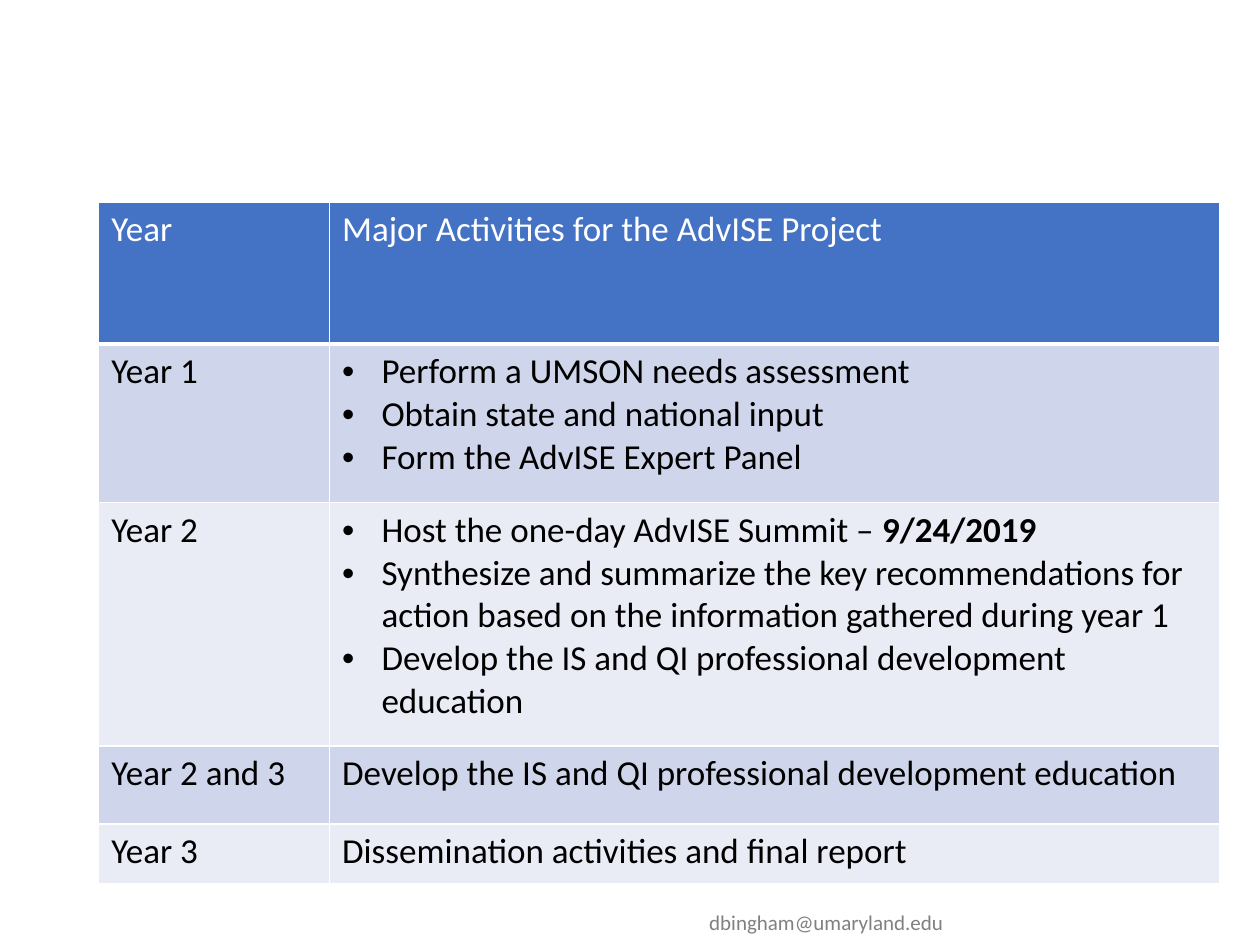
from lxml import etree
from pptx import Presentation
from pptx.dml.color import RGBColor
from pptx.oxml import ns
from pptx.util import Pt

FONT = "Calibri"
HEADER_FILL = "4472C4"
BAND_FILLS = ("CFD5EA", "E9EBF5")
COLUMN_WIDTHS = (131.9, 508.6)
ROW_HEIGHTS = (81, 90.7, 139, 44.6, 34.4)
BULLET_INDENT = 22.5

# Each activity is a list of (text, bold) runs; several activities become bullets.
PLAN = [
    ("Year", [[("Major Activities for the AdvISE Project", False)]]),
    ("Year 1", [
        [("Perform a UMSON needs assessment", False)],
        [("Obtain state and national input", False)],
        [("Form the AdvISE Expert Panel", False)],
    ]),
    ("Year 2", [
        [("Host the one-day AdvISE Summit – ", False), ("9/24/2019", True)],
        [("Synthesize and summarize the key recommendations for action "
          "based on the information gathered during year 1", False)],
        [("Develop the IS and QI professional development education", False)],
    ]),
    ("Year 2 and 3",
     [[("Develop the IS and QI professional development education", False)]]),
    ("Year 3", [[("Dissemination activities and final report", False)]]),
]


def color(value):
    return RGBColor.from_string(value)


def add_run(paragraph, words, size, ink, bold=False):
    run = paragraph.add_run()
    run.text = words
    run.font.name = FONT
    run.font.size = Pt(size)
    run.font.bold = bold
    run.font.color.rgb = color(ink)


def add_bullet(paragraph):
    properties = paragraph._p.get_or_add_pPr()
    properties.set("marL", str(Pt(BULLET_INDENT)))
    properties.set("indent", str(-Pt(BULLET_INDENT)))
    etree.SubElement(properties, ns.qn("a:buFont"), typeface="Arial")
    etree.SubElement(properties, ns.qn("a:buChar"), char="•")


def set_borders(cell, bottom_width):
    properties = cell._tc.get_or_add_tcPr()
    for side, width in zip("LRTB", (1, 1, 1, bottom_width)):
        line = etree.SubElement(properties, ns.qn(f"a:ln{side}"), w=str(Pt(width)))
        fill = etree.SubElement(line, ns.qn("a:solidFill"))
        etree.SubElement(fill, ns.qn("a:srgbClr"), val="FFFFFF")


def fill_cell(cell, paragraphs, fill, ink, bottom_width):
    set_borders(cell, bottom_width)
    cell.fill.solid()
    cell.fill.fore_color.rgb = color(fill)
    frame = cell.text_frame
    for index, runs in enumerate(paragraphs):
        paragraph = frame.add_paragraph() if index else frame.paragraphs[0]
        if len(paragraphs) > 1:
            add_bullet(paragraph)
        for words, bold in runs:
            add_run(paragraph, words, 20, ink, bold)


def add_plan_table(slide, left, top, width, height):
    table = slide.shapes.add_table(
        len(PLAN), len(COLUMN_WIDTHS), Pt(left), Pt(top), Pt(width), Pt(height)
    ).table
    for column, share in zip(table.columns, COLUMN_WIDTHS):
        column.width = Pt(width * share / sum(COLUMN_WIDTHS))
    for row, share in zip(table.rows, ROW_HEIGHTS):
        row.height = Pt(height * share / sum(ROW_HEIGHTS))
    for index, (year, activities) in enumerate(PLAN):
        if index == 0:
            look = (HEADER_FILL, "FFFFFF", 3)
        else:
            look = (BAND_FILLS[(index - 1) % 2], "000000", 1)
        fill_cell(table.cell(index, 0), [[(year, False)]], *look)
        fill_cell(table.cell(index, 1), activities, *look)


def add_contact(slide, left, top, width, height):
    box = slide.shapes.add_textbox(Pt(left), Pt(top), Pt(width), Pt(height))
    box.text_frame.word_wrap = True
    add_run(box.text_frame.paragraphs[0], "dbingham@umaryland.edu", 12, "808080")


def main():
    deck = Presentation()
    deck.slide_width, deck.slide_height = Pt(720), Pt(540)
    slide = deck.slides.add_slide(deck.slide_layouts[6])
    add_plan_table(slide, 56.4, 115.5, 640.5, 389.7)
    add_contact(slide, 398.2, 516.2, 232.6, 28.8)
    deck.save("out.pptx")


if __name__ == "__main__":
    main()
